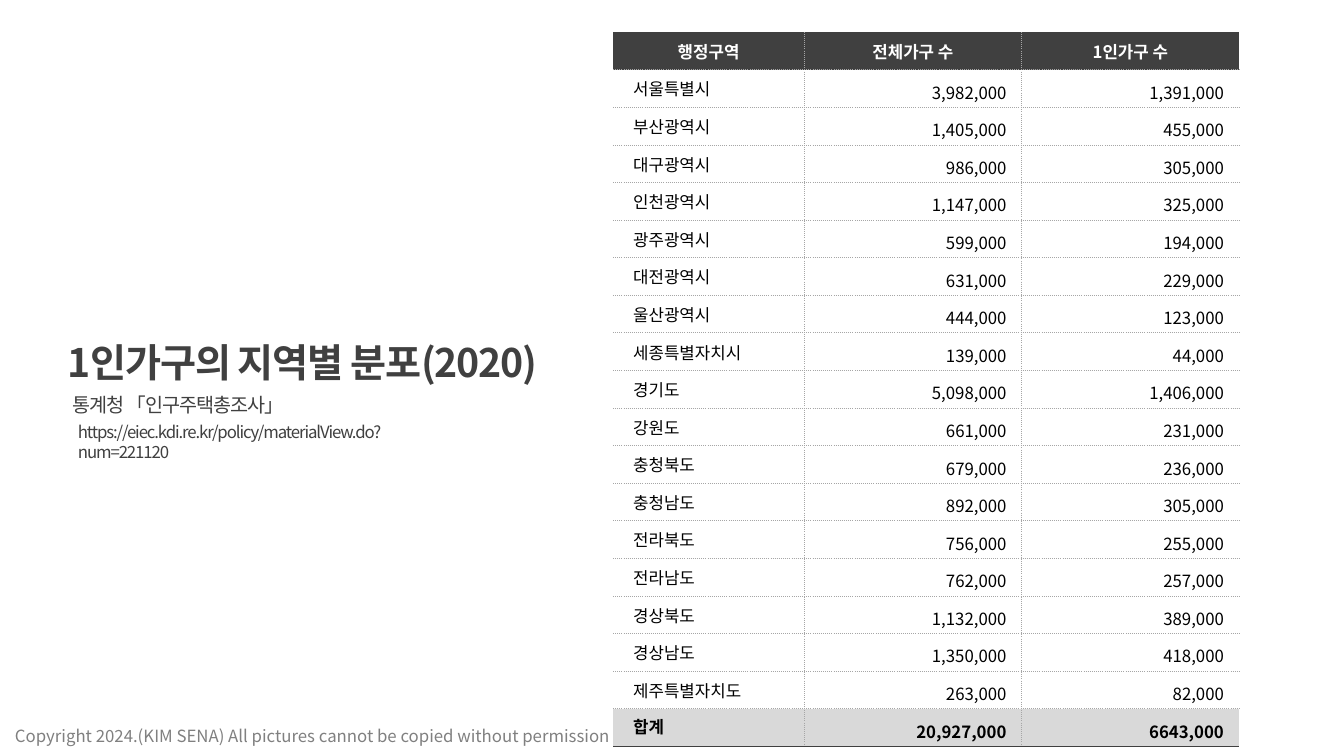
from lxml.etree import SubElement
from pptx import Presentation
from pptx.dml.color import RGBColor
from pptx.enum.text import MSO_ANCHOR, MSO_AUTO_SIZE, PP_ALIGN
from pptx.oxml import parse_xml
from pptx.oxml.ns import nsdecls, qn
from pptx.util import Inches, Pt

WIDE, HIGH = Inches(13.33), Inches(7.5)
FACE = "Noto Sans CJK KR"
DARK, GREY, PALE, DOT = "404040", "808080", "D9D9D9", "A6A6A6"
WHITE, BLACK = "FFFFFF", "000000"
COLS = (1.9, 2.16, 2.16)
HEAD = ("행정구역", "전체가구 수", "1인가구 수")
BODY = (
    ("서울특별시", 3982, 1391),
    ("부산광역시", 1405, 455),
    ("대구광역시", 986, 305),
    ("인천광역시", 1147, 325),
    ("광주광역시", 599, 194),
    ("대전광역시", 631, 229),
    ("울산광역시", 444, 123),
    ("세종특별자치시", 139, 44),
    ("경기도", 5098, 1406),
    ("강원도", 661, 231),
    ("충청북도", 679, 236),
    ("충청남도", 892, 305),
    ("전라북도", 756, 255),
    ("전라남도", 762, 257),
    ("경상북도", 1132, 389),
    ("경상남도", 1350, 418),
    ("제주특별자치도", 263, 82),
)
TOTAL = ("합계", "20,927,000", "6643,000")


def color(code):
    """Turn a hex string into a colour."""
    return RGBColor.from_string(code)


def apply(item, **values):
    """Set each named value on an item."""
    for name, value in values.items():
        setattr(item, name, value)


def within(box, left, top, wide, high):
    """Give the part of a box that the four shares mark out."""
    x, y, w, h = box
    return [int(n) for n in (x + w * left, y + h * top, w * wide, h * high)]


def write(frame, text, size, code, bold=False, space=0):
    """Write one styled run and return its paragraph."""
    para = frame.paragraphs[0]
    run = para.add_run()
    run.text = text
    apply(run.font, name=FACE, size=Pt(size), bold=bold)
    run.font.color.rgb = color(code)
    props = run.font._element
    SubElement(props, qn("a:ea")).set("typeface", FACE)
    if space:
        props.set("spc", str(int(space * 100)))
    return para


def label(slide, box, text, size, code, wrap=True, **style):
    """Place a text box that fits its text."""
    frame = slide.shapes.add_textbox(*box).text_frame
    apply(frame, word_wrap=wrap, auto_size=MSO_AUTO_SIZE.SHAPE_TO_FIT_TEXT)
    write(frame, text, size, code, **style)


def border(cell, lines):
    """Draw the sides of a cell: left, right, top, bottom."""
    props = cell._tc.get_or_add_tcPr()
    for spot, (side, line) in enumerate(zip("LRTB", lines)):
        if line:
            code, width, dash = line
            ink = (f'<a:solidFill><a:srgbClr val="{code}"/></a:solidFill>'
                   f'<a:prstDash val="{dash}"/>')
        else:
            width, ink = 0, "<a:noFill/>"
        props.insert(spot, parse_xml(
            f'<a:ln{side} {nsdecls("a")} w="{Pt(width)}">{ink}</a:ln{side}>'))


def heading(slide, box):
    """Place the title, its source and its address."""
    lines = (
        ((0, 0, 1, 0.5), "1인가구의 지역별 분포(2020)", 28, True, False),
        ((0.01, 0.48, 0.44, 0.3), "통계청 「인구주택총조사」", 14, False, False),
        ((0.02, 0.73, 0.77, 0.27),
         "https://eiec.kdi.re.kr/policy/materialView.do?num=221120", 12, False, True),
    )
    for part, text, size, bold, wrap in lines:
        label(slide, within(box, *part), text, size, DARK, wrap, bold=bold, space=-0.8)


def grid(slide, box):
    """Place the table of households by region."""
    body = [(name, *(f"{count:,},000" for count in pair)) for name, *pair in BODY]
    rows = [HEAD, *body, TOTAL]
    last, edge = len(rows) - 1, len(COLS) - 1
    table = slide.shapes.add_table(len(rows), len(COLS), *box).table
    apply(table, first_row=False, horz_banding=False)
    for col, share in zip(table.columns, COLS):
        col.width = int(box[2] * share / sum(COLS))
    for row in table.rows:
        row.height = box[3] // len(rows)
    dots, rule = (DOT, 0.75, "sysDot"), (DARK, 1, "solid")
    for r, row in enumerate(rows):
        top, end = r == 0, r == last
        fill = DARK if top else PALE if end else WHITE
        for c, text in enumerate(row):
            cell = table.cell(r, c)
            cell.fill.solid()
            cell.fill.fore_color.rgb = color(fill)
            apply(cell,
                  vertical_anchor=MSO_ANCHOR.TOP if end else MSO_ANCHOR.MIDDLE,
                  margin_left=Inches(0.1 if top or c else 0.2),
                  margin_right=Inches(0.1 if top or not c else 0.15))
            para = write(cell.text_frame, text, 12, WHITE if top else BLACK, top or end)
            if top:
                para.alignment = PP_ALIGN.CENTER
            elif c:
                apply(para, alignment=PP_ALIGN.RIGHT, line_spacing=1.2)
            border(cell, (dots if c else None, dots if c < edge else None,
                          rule if top else dots, rule if end else dots))


def main():
    """Build the slide and save it."""
    deck = Presentation()
    apply(deck, slide_width=WIDE, slide_height=HIGH)
    slide = deck.slides.add_slide(deck.slide_layouts[6])
    page = (0, 0, WIDE, HIGH)
    label(slide, within(page, 0.05 / 13.33, 7.15 / 7.5, 6.15 / 13.33, 0.04),
          "Copyright 2024.(KIM SENA) All pictures cannot be copied without permission",
          12, GREY)
    grid(slide, within(page, 6.08 / 13.33, 0.32 / 7.5, 6.21 / 13.33, 7.09 / 7.5))
    heading(slide, within(page, 0.57 / 13.33, 3.31 / 7.5, 5.23 / 13.33, 1.13 / 7.5))
    deck.save("out.pptx")


if __name__ == "__main__":
    main()
